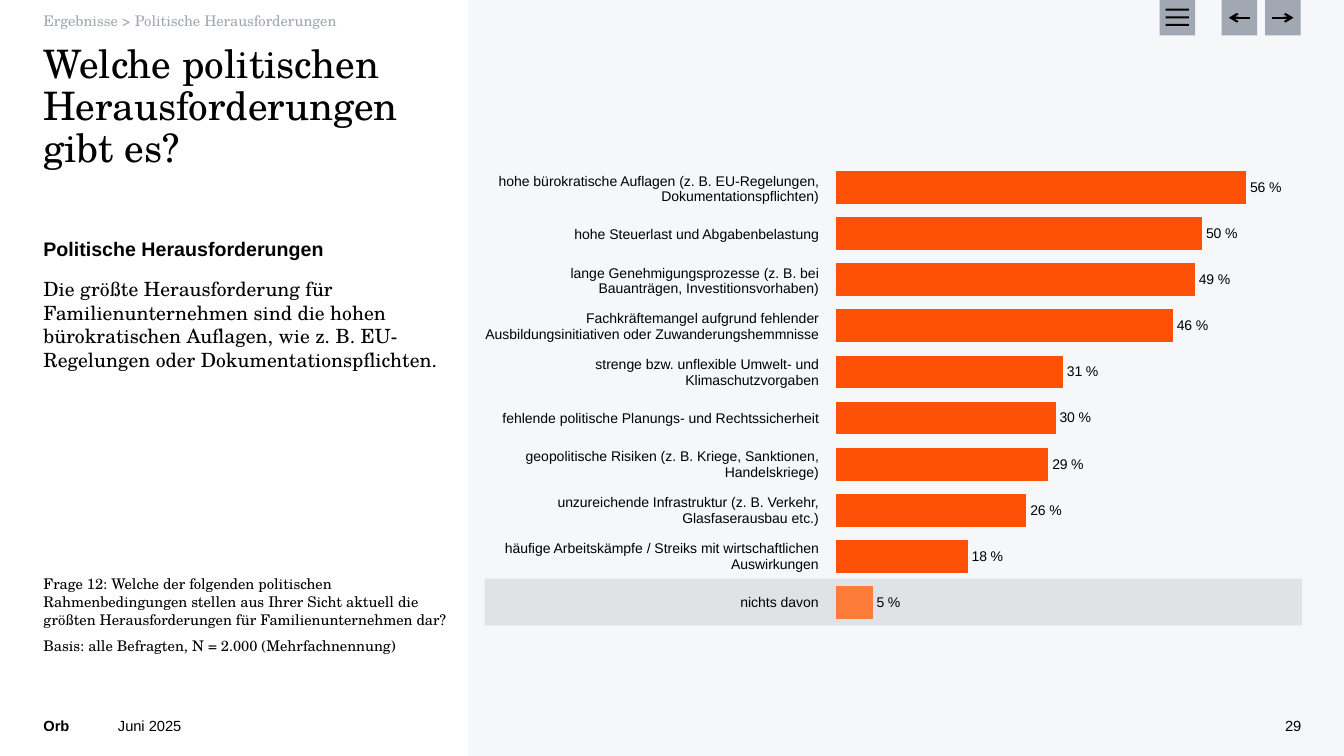
from dataclasses import dataclass
from typing import Any

from lxml import etree
from pptx import Presentation
from pptx.chart.data import CategoryChartData
from pptx.dml.color import RGBColor
from pptx.enum.chart import XL_CHART_TYPE, XL_LABEL_POSITION
from pptx.enum.shapes import MSO_CONNECTOR, MSO_SHAPE
from pptx.enum.text import MSO_ANCHOR, PP_ALIGN
from pptx.oxml import parse_xml
from pptx.oxml.ns import nsdecls, qn
from pptx.util import Emu, Inches, Pt

RECTANGLE = MSO_SHAPE.RECTANGLE
STRAIGHT = MSO_CONNECTOR.STRAIGHT
BAR = XL_CHART_TYPE.BAR_CLUSTERED
OUTSIDE_END = XL_LABEL_POSITION.OUTSIDE_END
TOP, MIDDLE, BOTTOM = MSO_ANCHOR.TOP, MSO_ANCHOR.MIDDLE, MSO_ANCHOR.BOTTOM
LEFT, RIGHT = PP_ALIGN.LEFT, PP_ALIGN.RIGHT

COLORS = {"black": "000000", "panel": "F5F7F8", "highlight": "DFE3E6",
          "grey": "A1A8B3", "orange": "FD5108", "light_orange": "FE7C39"}
SANS, SERIF = "Arial", "TeX Gyre Schola"
WIDTH, HEIGHT = Inches(13.333), Inches(7.5)
PLAIN_TABLE = "{2D5ABB26-0587-4C30-8999-92F81FD0307C}"

MARGIN, TEXT_WIDTH = 3.23, 30.6
FOOTER_TOP, FOOTER_HEIGHT = 94.8, 2.4
BUTTON_WIDTH, BUTTON_HEIGHT = 2.65, 4.7
ARROW_INSET = 0.53
SPACER_ROWS = [2.53, 4.53, 3.33]
ANSWER_ROW = 6.08


@dataclass
class Box:
    left: float
    top: float
    width: float
    height: float

    def emu(self) -> tuple[Emu, Emu, Emu, Emu]:
        return across(self.left), down(self.top), across(self.width), down(self.height)


@dataclass
class Line:
    text: str
    size: float
    font: str = SERIF
    color: str = "black"
    bold: bool = False
    before: float = 0
    after: float = 0
    spacing: float = 1.0


@dataclass
class TextBlock:
    box: Box
    lines: list[Line]
    anchor: Any = TOP
    align: Any = LEFT


@dataclass
class Answer:
    label: str
    share: float


def across(percent: float) -> Emu:
    return Emu(round(WIDTH * percent / 100))


def down(percent: float) -> Emu:
    return Emu(round(HEIGHT * percent / 100))


def rgb(name: str) -> RGBColor:
    return RGBColor.from_string(COLORS[name])


def style_font(font: Any, line: Line) -> None:
    font.name, font.size, font.bold = line.font, Pt(line.size), line.bold
    font.color.rgb = rgb(line.color)


def draw_text(shapes: Any, block: TextBlock) -> None:
    frame = shapes.add_textbox(*block.box.emu()).text_frame
    frame.word_wrap = True
    frame.vertical_anchor = block.anchor
    frame.margin_left = frame.margin_right = frame.margin_top = frame.margin_bottom = 0
    frame.text = "\n".join(line.text for line in block.lines)
    for paragraph, line in zip(frame.paragraphs, block.lines):
        paragraph.alignment = block.align
        paragraph.line_spacing = line.spacing
        paragraph.space_before, paragraph.space_after = Pt(line.before), Pt(line.after)
        style_font(paragraph.runs[0].font, line)


def draw_rectangle(shapes: Any, box: Box, color: str) -> None:
    rectangle = shapes.add_shape(RECTANGLE, *box.emu())
    rectangle.shadow.inherit = False
    rectangle.fill.solid()
    rectangle.fill.fore_color.rgb = rgb(color)
    rectangle.line.fill.background()


def draw_button(shapes: Any, left: float) -> Any:
    button = shapes.add_group_shape().shapes
    draw_rectangle(button, Box(left, 0, BUTTON_WIDTH, BUTTON_HEIGHT), "grey")
    return button


def draw_arrow_button(shapes: Any, left: float, forward: bool) -> None:
    button = draw_button(shapes, left)
    ends = [left + ARROW_INSET, left + BUTTON_WIDTH - ARROW_INSET]
    tip, tail = reversed(ends) if forward else ends
    middle = down(BUTTON_HEIGHT / 2)
    arrow = button.add_connector(STRAIGHT, across(tip), middle, across(tail), middle)
    arrow.line.color.rgb = rgb("black")
    arrow.line.width = Pt(1.5)
    etree.SubElement(arrow.line._get_or_add_ln(), qn("a:headEnd"), type="arrow")
    etree.SubElement(arrow._element.spPr, qn("a:effectLst"))


def draw_menu_button(shapes: Any, left: float) -> None:
    button = draw_button(shapes, left)
    for row in range(3):
        draw_rectangle(button, Box(left + 0.45, 1.15 + row, 1.73, 0.27), "black")


def draw_chart(shapes: Any, box: Box, answers: list[Answer]) -> None:
    data = CategoryChartData()
    data.categories = [str(number) for number in range(1, len(answers) + 1)]
    data.add_series("Series 1", [answer.share for answer in answers])
    chart = shapes.add_chart(BAR, *box.emu(), data).chart
    chart.has_legend = chart.has_title = False
    style_font(chart.font, Line("", 18, SANS))
    chart.category_axis.reverse_order = True
    chart.category_axis.visible = False
    values = chart.value_axis
    values.minimum_scale, values.maximum_scale = 0, 0.6
    values.has_major_gridlines = values.visible = False
    plot = chart.plots[0]
    plot.gap_width = 41
    plot.vary_by_categories = False
    bars = plot.series[0]
    bars.invert_if_negative = False
    last_point = bars.points[len(answers) - 1]
    for target, color in ((bars, "orange"), (last_point, "light_orange")):
        target.format.fill.solid()
        target.format.fill.fore_color.rgb = rgb(color)
    labels = bars.data_labels
    labels.show_value = True
    labels.number_format, labels.number_format_is_linked = r"0\ %", False
    labels.position = OUTSIDE_END
    style_font(labels.font, Line("", 10, SANS))
    area = chart._chartSpace.chart.plotArea
    for layout in area.findall(qn("c:layout")):
        area.remove(layout)
    area.insert(0, parse_xml(
        f'<c:layout {nsdecls("c")}><c:manualLayout><c:layoutTarget val="inner"/>'
        '<c:xMode val="edge"/><c:yMode val="edge"/><c:x val="0.39"/><c:y val="0"/>'
        '<c:w val="0.58"/><c:h val="1"/></c:manualLayout></c:layout>'))


def draw_labels(shapes: Any, left: float, top: float, width: float, answers: list[Answer]) -> None:
    heights = SPACER_ROWS + [ANSWER_ROW] * len(answers)
    texts = [""] * len(SPACER_ROWS) + [answer.label for answer in answers]
    box = Box(left, top, width, sum(heights))
    table = shapes.add_table(len(heights), 1, *box.emu()).table
    table.first_row = table.horz_banding = False
    table._tbl.tblPr.find(qn("a:tableStyleId")).text = PLAIN_TABLE
    for index, (height, text) in enumerate(zip(heights, texts)):
        table.rows[index].height = down(height)
        cell = table.cell(index, 0)
        cell.fill.background()
        cell.vertical_anchor = MIDDLE
        cell.margin_left = cell.margin_top = cell.margin_bottom = 0
        cell.margin_right = Inches(0.04)
        cell.text_frame.text = text
        paragraph = cell.text_frame.paragraphs[0]
        paragraph.alignment = RIGHT
        for run in paragraph.runs:
            style_font(run.font, Line(text, 10, SANS))
        if not text:
            etree.SubElement(paragraph._p, qn("a:endParaRPr"), sz="800")


ANSWERS = [
    Answer("hohe bürokratische Auflagen (z. B. EU-Regelungen, Dokumentationspflichten)", 0.56),
    Answer("hohe Steuerlast und Abgabenbelastung", 0.5),
    Answer("lange Genehmigungsprozesse (z. B. bei\vBauanträgen, Investitionsvorhaben)", 0.49),
    Answer("Fachkräftemangel aufgrund fehlender Ausbildungsinitiativen oder Zuwanderungshemmnisse", 0.46),
    Answer("strenge bzw. unflexible Umwelt- und Klimaschutzvorgaben", 0.31),
    Answer("fehlende politische Planungs- und Rechtssicherheit", 0.3),
    Answer("geopolitische Risiken (z. B. Kriege, Sanktionen, Handelskriege)", 0.29),
    Answer("unzureichende Infrastruktur (z. B. Verkehr, Glasfaserausbau etc.)", 0.26),
    Answer("häufige Arbeitskämpfe / Streiks mit wirtschaftlichen Auswirkungen", 0.18),
    Answer("nichts davon", 0.05),
]
TEXTS = [
    TextBlock(Box(MARGIN, FOOTER_TOP, 3.53, FOOTER_HEIGHT), [Line("Orb", 10.5, SANS, bold=True)]),
    TextBlock(Box(MARGIN, 5.87, TEXT_WIDTH, 13.07),
              [Line("Welche politischen Herausforderungen gibt es?", 28, spacing=0.9)]),
    TextBlock(Box(MARGIN, 1.07, TEXT_WIDTH, 3.73),
              [Line("Ergebnisse > Politische Herausforderungen", 10.5, color="grey", spacing=0.9)], MIDDLE),
    TextBlock(Box(MARGIN, 31.33, TEXT_WIDTH, 35.6), [
        Line("Politische Herausforderungen", 14, SANS, bold=True, after=6),
        Line("Die größte Herausforderung für Familienunternehmen sind die hohen bürokratischen "
             "Auflagen, wie z. B. EU-Regelungen oder Dokumentationspflichten.", 14, before=6)]),
    TextBlock(Box(MARGIN, 58, TEXT_WIDTH, 28.53), [
        Line("Frage 12: Welche der folgenden politischen Rahmenbedingungen stellen aus Ihrer Sicht "
             "aktuell die größten Herausforderungen für Familienunternehmen dar?", 10.5),
        Line("Basis: alle Befragten, N = 2.000 (Mehrfachnennung)", 10.5, before=6)], BOTTOM),
    TextBlock(Box(94.35, FOOTER_TOP, 2.48, FOOTER_HEIGHT), [Line("29", 10.5, SANS)], BOTTOM, RIGHT),
    TextBlock(Box(8.78, FOOTER_TOP, 72.3, FOOTER_HEIGHT), [Line("Juni 2025", 10.5, SANS)], BOTTOM),
]


def main() -> None:
    deck = Presentation()
    deck.slide_width, deck.slide_height = WIDTH, HEIGHT
    shapes = deck.slides.add_slide(deck.slide_layouts[6]).shapes
    draw_rectangle(shapes, Box(34.8, 0, 65.2, 100), "panel")
    draw_rectangle(shapes, Box(36.05, 76.53, 60.83, 6.2), "highlight")
    for block in TEXTS:
        draw_text(shapes, block)
    draw_chart(shapes, Box(40.2, 21.73, 56.4, 61.07), ANSWERS)
    draw_arrow_button(shapes, 94.13, forward=True)
    draw_arrow_button(shapes, 90.9, forward=False)
    draw_labels(shapes, 35.78, 11.6, 25.43, ANSWERS)
    draw_menu_button(shapes, 86.28)
    deck.save("out.pptx")


if __name__ == "__main__":
    main()
